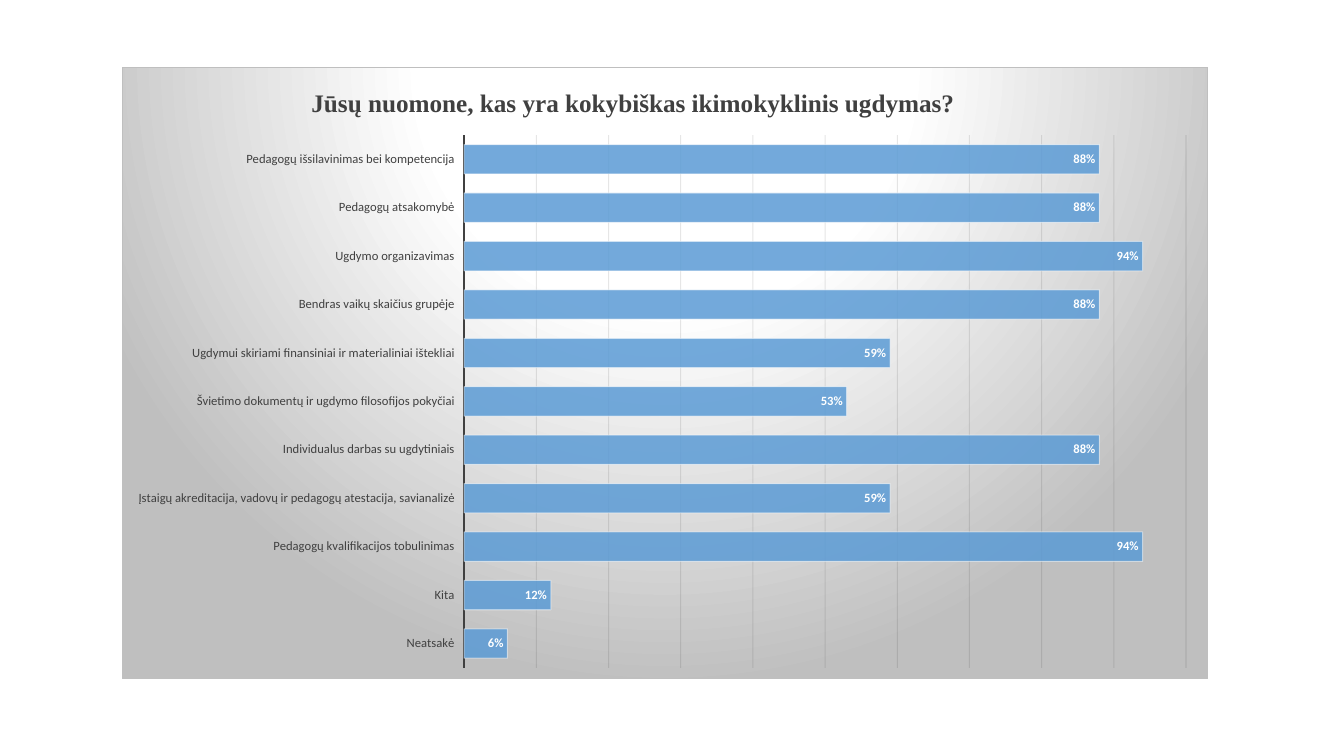
from lxml.etree import SubElement
from pptx import Presentation
from pptx.chart.data import CategoryChartData
from pptx.dml.color import RGBColor
from pptx.enum.chart import XL_CHART_TYPE as ChartType
from pptx.enum.chart import XL_LABEL_POSITION as LabelPosition
from pptx.enum.chart import XL_TICK_LABEL_POSITION as TickLabels
from pptx.enum.chart import XL_TICK_MARK as TickMark
from pptx.oxml import parse_xml
from pptx.oxml.ns import nsdecls, qn
from pptx.util import Cm, Pt

BLACK = RGBColor(0x00, 0x00, 0x00)
WHITE = RGBColor(0xFF, 0xFF, 0xFF)
CHARCOAL = RGBColor(0x40, 0x40, 0x40)
GRID = RGBColor(0x0D, 0x0D, 0x0D)
SILVER = RGBColor(0xBF, 0xBF, 0xBF)
BLUE = RGBColor(0x5B, 0x9B, 0xD5)

QUESTION = "Jūsų nuomone, kas yra kokybiškas ikimokyklinis ugdymas?"
ANSWERS = {
    "Neatsakė": 0.06,
    "Kita": 0.12,
    "Pedagogų kvalifikacijos tobulinimas": 0.94,
    "Įstaigų akreditacija, vadovų ir pedagogų atestacija, savianalizė": 0.59,
    "Individualus darbas su ugdytiniais": 0.88,
    "Švietimo dokumentų ir ugdymo filosofijos pokyčiai": 0.53,
    "Ugdymui skiriami finansiniai ir materialiniai ištekliai": 0.59,
    "Bendras vaikų skaičius grupėje": 0.88,
    "Ugdymo organizavimas": 0.94,
    "Pedagogų atsakomybė": 0.88,
    "Pedagogų išsilavinimas bei kompetencija": 0.88,
}

BASE_FONT = {"name": "Calibri", "size": Pt(10)}
TITLE_FONT = {"name": "Times New Roman", "size": Pt(18), "bold": True}
CATEGORY_FONT = {"name": "Calibri", "size": Pt(9), "bold": False}
LABEL_FONT = {"name": "Calibri", "size": Pt(9), "bold": True}
LABEL_FORMAT = {
    "show_value": True,
    "number_format": "0%",
    "number_format_is_linked": False,
    "position": LabelPosition.INSIDE_END,
}
SHARE_AXIS = {
    "minimum_scale": 0,
    "maximum_scale": 1,
    "major_unit": 0.1,
    "has_major_gridlines": True,
    "visible": False,
}
ANSWER_AXIS = {
    "major_tick_mark": TickMark.NONE,
    "minor_tick_mark": TickMark.NONE,
    "tick_label_position": TickLabels.LOW,
    "has_major_gridlines": False,
}


def apply_format(target, values):
    """Set every attribute in values on target."""
    for attribute, value in values.items():
        setattr(target, attribute, value)


def style_font(font, values, color):
    """Give a font its format values and colour."""
    apply_format(font, values)
    font.color.rgb = color


def style_line(line, color, width):
    """Give a line a solid colour and a width."""
    line.color.rgb = color
    line.width = Pt(width)


def set_opacity(parent, color_path, percent):
    """Make the colours found under parent partly transparent."""
    for color in parent.xpath(color_path):
        SubElement(color, qn("a:alpha")).set("val", str(percent * 1000))


def place(part, index, **fractions):
    """Fix a chart part at fractions of the chart area."""
    for automatic in part.findall(qn("c:layout")):
        part.remove(automatic)
    layout = parse_xml(f"<c:layout {nsdecls('c')}><c:manualLayout/></c:layout>")
    modes = {"xMode": "edge", "yMode": "edge"}
    if "w" in fractions:
        modes = {"layoutTarget": "inner", **modes}
    for tag, value in {**modes, **fractions}.items():
        SubElement(layout[0], qn(f"c:{tag}")).set("val", str(value))
    part.insert(index, layout)


def shade_background(chart):
    """Fill the chart area with a circular gradient and a thin border."""
    stops = "".join(
        f'<a:gs pos="{percent * 1000}"><a:srgbClr val="{color}"/></a:gs>'
        for percent, color in ((0, WHITE), (39, WHITE), (100, SILVER))
    )
    area = parse_xml(
        f"<c:spPr {nsdecls('c', 'a')}><a:gradFill><a:gsLst>{stops}</a:gsLst>"
        '<a:path path="circle"><a:fillToRect l="50000" t="-80000" r="50000" b="180000"/>'
        f'</a:path></a:gradFill><a:ln w="{Pt(0.75)}"><a:solidFill>'
        f'<a:srgbClr val="{SILVER}"/></a:solidFill></a:ln></c:spPr>'
    )
    chart._chartSpace.find(qn("c:chart")).addnext(area)


def add_answer_chart(slide):
    """Add the bar chart of answer shares."""
    answers = CategoryChartData(number_format="0%")
    answers.categories = list(ANSWERS)
    answers.add_series("Series 1", list(ANSWERS.values()))
    chart = slide.shapes.add_chart(
        ChartType.BAR_CLUSTERED, Cm(3.07), Cm(1.68), Cm(27.38), Cm(15.44), answers
    ).chart
    chart.has_legend = False
    style_font(chart.font, BASE_FONT, BLACK)
    shade_background(chart)
    plot_area = chart._chartSpace.find(f".//{qn('c:plotArea')}")
    place(plot_area, 0, x=0.315, y=0.111, w=0.665, h=0.871)
    return chart


def style_title(chart):
    """Write the question above the bars."""
    heading = chart.chart_title
    heading.text_frame.text = QUESTION
    style_font(heading.text_frame.paragraphs[0].runs[0].font, TITLE_FONT, CHARCOAL)
    place(heading._element, 1, x=0.17, y=0.025)


def style_axes(chart):
    """Format the answer axis and the faint share gridlines."""
    answer_axis, share_axis = chart.category_axis, chart.value_axis
    apply_format(answer_axis, ANSWER_AXIS)
    style_font(answer_axis.tick_labels.font, CATEGORY_FONT, CHARCOAL)
    style_line(answer_axis.format.line, CHARCOAL, 1.5)
    apply_format(share_axis, SHARE_AXIS)
    style_line(share_axis.major_gridlines.format.line, GRID, 0.75)
    set_opacity(share_axis._element, "c:majorGridlines//a:srgbClr", 10)


def style_bars(chart):
    """Format the bars and their percentage labels."""
    bars = chart.plots[0]
    apply_format(bars, {"gap_width": 65, "vary_by_categories": False})
    shares = bars.series[0]
    shares.format.fill.solid()
    shares.format.fill.fore_color.rgb = BLUE
    style_line(shares.format.line, WHITE, 0.75)
    set_opacity(shares._element, "c:spPr/a:solidFill/a:srgbClr", 85)
    set_opacity(shares._element, "c:spPr/a:ln//a:srgbClr", 50)
    apply_format(shares.data_labels, LABEL_FORMAT)
    style_font(shares.data_labels.font, LABEL_FONT, WHITE)


def main():
    """Build the survey slide and save it."""
    deck = Presentation()
    apply_format(deck, {"slide_width": Cm(33.87), "slide_height": Cm(19.05)})
    slide = deck.slides.add_slide(deck.slide_layouts[6])
    chart = add_answer_chart(slide)
    style_title(chart)
    style_axes(chart)
    style_bars(chart)
    deck.save("out.pptx")


if __name__ == "__main__":
    main()
